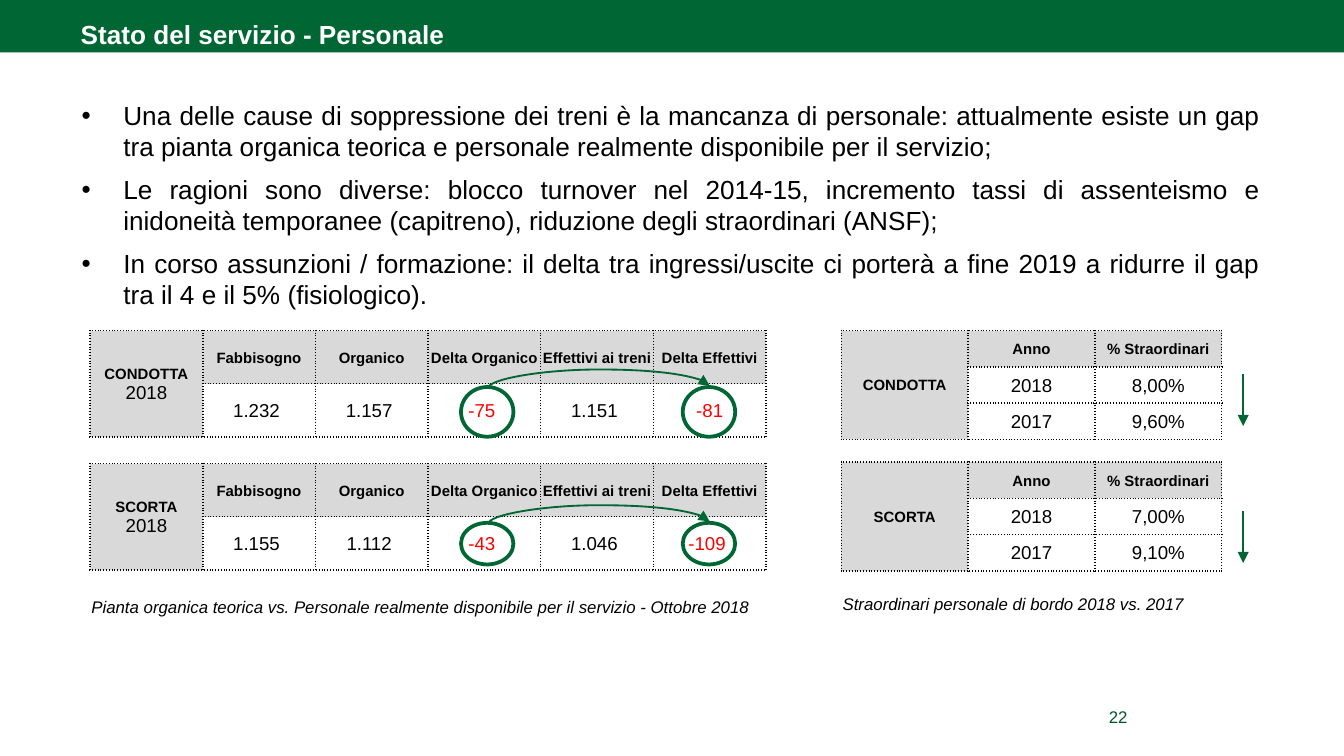
from lxml import etree
from pptx import Presentation
from pptx.dml.color import RGBColor
from pptx.enum.shapes import MSO_CONNECTOR, MSO_SHAPE
from pptx.enum.text import MSO_ANCHOR, MSO_AUTO_SIZE, PP_ALIGN
from pptx.oxml.ns import qn
from pptx.util import Inches, Pt

STRAIGHT, CURVE = MSO_CONNECTOR.STRAIGHT, MSO_CONNECTOR.CURVE
LEFT, CENTER, JUSTIFY = PP_ALIGN.LEFT, PP_ALIGN.CENTER, PP_ALIGN.JUSTIFY
TOP, MIDDLE = MSO_ANCHOR.TOP, MSO_ANCHOR.MIDDLE

WIDTH = 10
HEIGHT = WIDTH * 9 / 16
FONT = "Arial"
COLORS = {"green": "006633", "number": "00542A", "gray": "D9D9D9",
          "black": "000000", "white": "FFFFFF", "red": "FF0000"}

BULLETS = [
    "Una delle cause di soppressione dei treni è la mancanza di personale: attualmente esiste un gap "
    "tra pianta organica teorica e personale realmente disponibile per il servizio;",
    "Le ragioni sono diverse: blocco turnover nel 2014-15, incremento tassi di assenteismo e "
    "inidoneità temporanee (capitreno), riduzione degli straordinari (ANSF);",
    "In corso assunzioni / formazione: il delta tra ingressi/uscite ci porterà a fine 2019 a ridurre il gap "
    "tra il 4 e il 5% (fisiologico).",
]
STAFF_HEADER = ["Fabbisogno", "Organico", "Delta Organico", "Effettivi ai treni", "Delta Effettivi"]
STAFF = [
    ("CONDOTTA\n2018", [STAFF_HEADER, ["1.232 ", "1.157 ", "-75 ", "1.151 ", "-81"]]),
    ("SCORTA\n2018", [STAFF_HEADER, ["1.155 ", "1.112 ", "-43 ", "1.046 ", "-109 "]]),
]
OVERTIME_HEADER = ["Anno", "% Straordinari"]
OVERTIME = [
    ("CONDOTTA", [OVERTIME_HEADER, ["2018", "8,00%"], ["2017", "9,60%"]]),
    ("SCORTA", [OVERTIME_HEADER, ["2018", "7,00%"], ["2017", "9,10%"]]),
]


def color(name):
    return RGBColor.from_string(COLORS[name])


def format_paragraph(para, size, tint="black", bold=False, italic=False, align=LEFT):
    para.alignment = align
    for span in para.runs:
        font = span.font
        font.name, font.size, font.bold, font.italic = FONT, Pt(size), bold, italic
        font.color.rgb = color(tint)


def add_text(slide, left, top, width, height, lines):
    box = slide.shapes.add_textbox(Inches(left), Inches(top), Inches(width), Inches(height))
    box.text_frame.word_wrap = True
    box.text_frame.text = "\n".join(lines)
    return box.text_frame


# Tables
def set_borders(cell, sides):
    properties = cell._tc.get_or_add_tcPr()
    for side in "LRTB":
        line = etree.SubElement(properties, qn(f"a:ln{side}"), w=str(Pt(1)))
        if side in sides:
            fill = etree.SubElement(line, qn("a:solidFill"))
            etree.SubElement(fill, qn("a:srgbClr"), val=COLORS["black"])
            etree.SubElement(line, qn("a:prstDash"), val="sysDot")
        else:
            etree.SubElement(line, qn("a:noFill"))


def fill_cell(cell, text="", sides="LRTB", shaded=False, align=CENTER, italic=False):
    cell.margin_left = cell.margin_right = cell.margin_top = Inches(0.01)
    cell.margin_bottom = 0
    cell.vertical_anchor = MIDDLE
    set_borders(cell, sides)
    if shaded:
        cell.fill.solid()
        cell.fill.fore_color.rgb = color("gray")
    else:
        cell.fill.background()
    cell.text_frame.text = text
    for para in cell.text_frame.paragraphs:
        bold = shaded and not para.text.isdigit()
        size = 9 if italic else 8 if bold else 10
        tint = "red" if text.startswith("-") else "black"
        format_paragraph(para, size, tint, bold, italic, align)
        if not text:
            etree.SubElement(para._p, qn("a:endParaRPr"), sz="600")


def add_group_table(slide, left, top, width, groups, row_height, gaps, caption, caption_height):
    block = len(groups[0][1])
    columns = len(groups[0][1][0]) + 1
    heights = [h for gap in gaps for h in [row_height] * block + [gap]] + [caption_height]
    frame = slide.shapes.add_table(len(heights), columns, Inches(left), Inches(top),
                                   Inches(width), Inches(sum(heights)))
    table = frame.table
    table.first_row = table.horz_banding = False
    for column in table.columns:
        column.width = Inches(width / columns)
    for row, height in zip(table.rows, heights):
        row.height = Inches(height)

    for index, (name, rows) in enumerate(groups):
        start = index * (block + 1)
        for offset, values in enumerate(rows):
            fill_cell(table.cell(start + offset, 0), "" if offset else name, shaded=True)
            for position, value in enumerate(values, 1):
                fill_cell(table.cell(start + offset, position), value, shaded=offset == 0)
        table.cell(start, 0).merge(table.cell(start + block - 1, 0))
        is_last = index == len(groups) - 1
        for position in range(columns):
            fill_cell(table.cell(start + block, position), sides="T" if is_last else "TB")

    last = len(heights) - 1
    for position in range(columns):
        fill_cell(table.cell(last, position), "" if position else caption, "",
                  align=LEFT, italic=True)
    table.cell(last, 0).merge(table.cell(last, columns - 1))


# Marks on the tables
def add_arrow(slide, kind, start, end):
    arrow = slide.shapes.add_connector(kind, *(Inches(v) for v in start + end))
    arrow.line.color.rgb = color("green")
    arrow.line.width = Pt(1)
    etree.SubElement(arrow.line._get_or_add_ln(), qn("a:tailEnd"), type="triangle")
    etree.SubElement(arrow._element.spPr, qn("a:effectLst"))
    return arrow


def add_arc(slide, left, right, level, rise=0.14, drop=0.02):
    """Curved arrow between two circle tops: an upright connector turned by 90 degrees."""
    middle, half = (left + right) / 2, (right - left) / 2
    arc = add_arrow(slide, CURVE, (middle + drop / 2, level + half), (middle - drop / 2, level - half))
    properties = arc._element.spPr
    properties.find(qn("a:xfrm")).set("rot", str(90 * 60000))
    guides = properties.find(qn("a:prstGeom")).get_or_add_avLst()
    etree.SubElement(guides, qn("a:gd"), name="adj1", fmla=f"val {round(rise / drop * 100000)}")


def add_circle(slide, left, top, height):
    circle = slide.shapes.add_shape(MSO_SHAPE.OVAL, Inches(left), Inches(top),
                                    Inches(0.39), Inches(height))
    circle.shadow.inherit = False
    circle.fill.background()
    circle.line.color.rgb = color("green")
    circle.line.width = Pt(2)


# Page parts
def add_title(slide, text):
    bar = slide.shapes.add_shape(MSO_SHAPE.RECTANGLE, 0, 0, Inches(WIDTH), Inches(0.39))
    bar.shadow.inherit = False
    bar.fill.solid()
    bar.fill.fore_color.rgb = color("green")
    bar.line.fill.background()
    slide.shapes._spTree.insert(2, bar._element)

    title = slide.shapes.title
    title.left, title.top = Inches(0.51), Inches(-0.02)
    title.width, title.height = Inches(8.98), Inches(0.4)
    frame = title.text_frame
    frame.text = text
    frame.auto_size = MSO_AUTO_SIZE.NONE
    frame.vertical_anchor = TOP
    frame.margin_left = frame.margin_right = Inches(0.09)
    frame.margin_top = frame.margin_bottom = Inches(0.04)
    frame.paragraphs[0].line_spacing = 1.5
    format_paragraph(frame.paragraphs[0], 14, "white", bold=True)


def add_bullets(slide):
    frame = add_text(slide, 0.51, 0.69, 8.97, 1.68, BULLETS)
    for index, para in enumerate(frame.paragraphs):
        properties = para._p.get_or_add_pPr()
        properties.set("marL", str(Inches(0.31)))
        properties.set("indent", str(-Inches(0.31)))
        etree.SubElement(properties, qn("a:buFont"), typeface=FONT)
        etree.SubElement(properties, qn("a:buChar"), char="•")
        para.space_before = Pt(3 if index else 0)
        para.space_after = Pt(3)
        format_paragraph(para, 14, align=JUSTIFY)


def main():
    deck = Presentation()
    deck.slide_width, deck.slide_height = Inches(WIDTH), Inches(HEIGHT)
    slide = deck.slides.add_slide(deck.slide_layouts[5])
    add_title(slide, "Stato del servizio - Personale")
    add_bullets(slide)

    add_group_table(slide, 0.67, 2.46, 5.03, STAFF, 1.58 / 4, (0.2, 0.17),
                    "Pianta organica teorica vs. Personale realmente disponibile per il servizio"
                    " - Ottobre 2018", 0.21)
    add_group_table(slide, 6.26, 2.46, 2.83, OVERTIME, 0.27, (0.17, 0.16),
                    "Straordinari personale di bordo 2018 vs. 2017", 0.18)

    # One pair of circles, one arc and one falling arrow for each group
    for circle_top, circle_height, arrow_top in ((2.88, 0.37, 2.78), (3.89, 0.31, 3.8)):
        for circle_left in (3.43, 5.08):
            add_circle(slide, circle_left, circle_top, circle_height)
        add_arc(slide, 3.63, 5.28, circle_top)
        add_arrow(slide, STRAIGHT, (9.25, arrow_top), (9.25, arrow_top + 0.39))

    number = add_text(slide, 8.03, 5.21, 0.58, 0.24, ["22"])
    format_paragraph(number.paragraphs[0], 9, "number", align=CENTER)
    deck.save("out.pptx")


if __name__ == "__main__":
    main()
